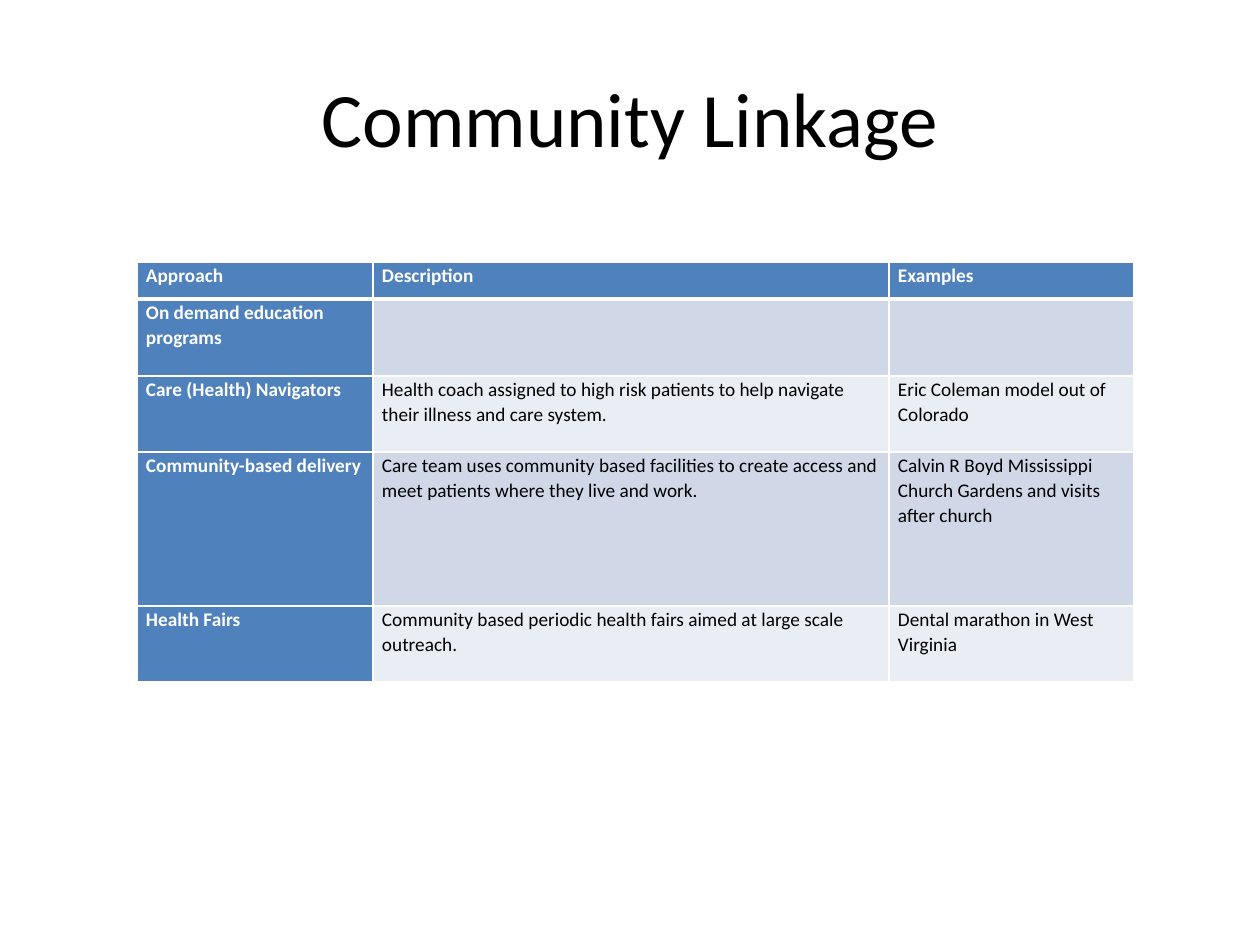
from lxml.etree import SubElement
from pptx import Presentation
from pptx.dml.color import RGBColor
from pptx.enum.text import MSO_ANCHOR, PP_ALIGN
from pptx.oxml.ns import qn
from pptx.util import Emu, Pt

TITLE = "Community Linkage"
ROWS = [
    ("Approach", "Description", "Examples"),
    ("On demand education programs", "", ""),
    ("Care (Health) Navigators",
     "Health coach assigned to high risk patients to help navigate their illness and care system.",
     "Eric Coleman model out of Colorado"),
    ("Community-based delivery",
     "Care team uses community based facilities to create access and meet patients where they live and work.",
     "Calvin R Boyd Mississippi Church Gardens and visits after church"),
    ("Health Fairs",
     "Community based periodic health fairs aimed at large scale outreach.",
     "Dental marathon in West Virginia"),
]
COLUMN_WIDTHS = [236, 516, 245]
ROW_HEIGHTS = [37, 77, 76, 154, 76]
TABLE_LEFT, TABLE_TOP = 137, 262
FONT = "Calibri"
WHITE, BLACK, BLUE = "FFFFFF", "000000", "4F81BD"
BANDS = ["E9EDF4", "D0D8E8"]


def px(count):
    return Emu(count * 914400 // 126)


def color(code):
    return RGBColor.from_string(code)


def add_span(para, text, size, code, bold=False):
    span = para.add_run()
    span.text = text
    span.font.name = FONT
    span.font.size = Pt(size)
    span.font.bold = bold
    span.font.color.rgb = color(code)


def set_borders(cell, bottom):
    """Draw white borders, 1 pt wide except the bottom; call before filling."""
    properties = cell._tc.get_or_add_tcPr()
    for side, width in (("L", 1), ("R", 1), ("T", 1), ("B", bottom)):
        line = SubElement(properties, qn(f"a:ln{side}"), w=str(Pt(width)))
        fill = SubElement(line, qn("a:solidFill"))
        SubElement(fill, qn("a:srgbClr"), val=WHITE)


def fill_cell(cell, text, row, column):
    is_heading = row == 0 or column == 0
    set_borders(cell, 3 if row == 0 else 1)
    cell.fill.solid()
    cell.fill.fore_color.rgb = color(BLUE if is_heading else BANDS[row % 2])
    cell.margin_left = cell.margin_right = px(9)
    cell.margin_top = cell.margin_bottom = 0
    if text:
        para = cell.text_frame.paragraphs[0]
        para.line_spacing = 1.07
        add_span(para, text, 11, WHITE if is_heading else BLACK, is_heading)


def add_title(page):
    box = page.shapes.add_textbox(px(63), px(38), px(1134), px(157))
    frame = box.text_frame
    frame.word_wrap = True
    frame.vertical_anchor = MSO_ANCHOR.MIDDLE
    para = frame.paragraphs[0]
    para.alignment = PP_ALIGN.CENTER
    add_span(para, TITLE, 44, BLACK)


def add_approaches(page):
    table = page.shapes.add_table(
        len(ROWS), len(COLUMN_WIDTHS), px(TABLE_LEFT), px(TABLE_TOP),
        px(sum(COLUMN_WIDTHS)), px(sum(ROW_HEIGHTS))).table
    for column, width in zip(table.columns, COLUMN_WIDTHS):
        column.width = px(width)
    for row, height in zip(table.rows, ROW_HEIGHTS):
        row.height = px(height)
    for row, texts in enumerate(ROWS):
        for column, text in enumerate(texts):
            fill_cell(table.cell(row, column), text, row, column)


def main():
    deck = Presentation()
    deck.slide_width, deck.slide_height = px(1260), px(945)
    page = deck.slides.add_slide(deck.slide_layouts[6])
    add_title(page)
    add_approaches(page)
    deck.save("out.pptx")


if __name__ == "__main__":
    main()
